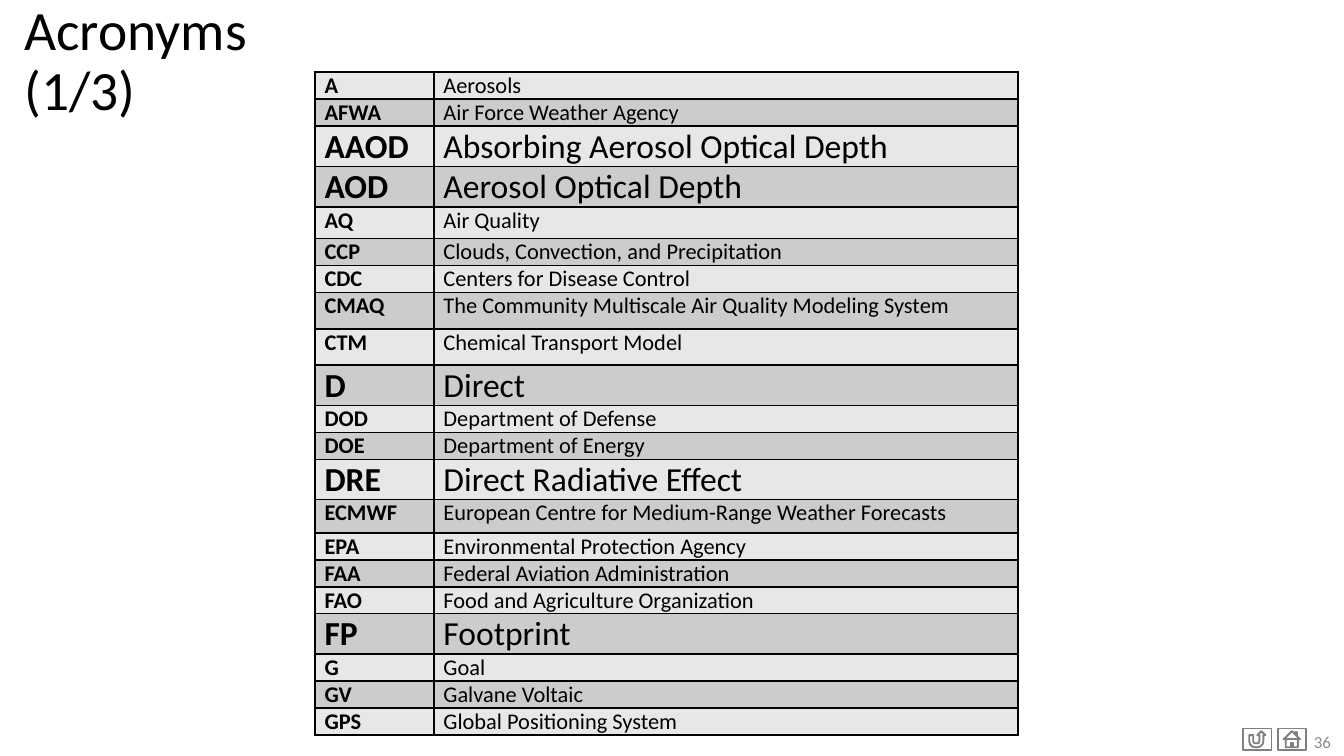
from lxml.etree import SubElement
from pptx import Presentation
from pptx.dml.color import RGBColor
from pptx.enum.shapes import MSO_SHAPE
from pptx.enum.text import MSO_ANCHOR, MSO_AUTO_SIZE, PP_ALIGN
from pptx.oxml.ns import qn
from pptx.util import Pt

COLORS = {
    "ink": "000000",
    "light": "E7E7E7",
    "dark": "CCCCCC",
    "button": "808080",
    "number": "8C8C8C",
}
ACRONYMS = [
    ("A", "Aerosols"),
    ("AFWA", "Air Force Weather Agency"),
    ("AAOD", "Absorbing Aerosol Optical Depth"),
    ("AOD", "Aerosol Optical Depth"),
    ("AQ", "Air Quality"),
    ("CCP", "Clouds, Convection, and Precipitation"),
    ("CDC", "Centers for Disease Control"),
    ("CMAQ", "The Community Multiscale Air Quality Modeling System"),
    ("CTM", "Chemical Transport Model"),
    ("D", "Direct"),
    ("DOD", "Department of Defense"),
    ("DOE", "Department of Energy"),
    ("DRE", "Direct Radiative Effect"),
    ("ECMWF", "European Centre for Medium-Range Weather Forecasts"),
    ("EPA", "Environmental Protection Agency"),
    ("FAA", "Federal Aviation Administration"),
    ("FAO", "Food and Agriculture Organization"),
    ("FP", "Footprint"),
    ("G", "Goal"),
    ("GV", "Galvane Voltaic"),
    ("GPS", "Global Positioning System"),
]
LARGE = {"AAOD", "AOD", "D", "DRE", "FP"}
ROW_HEIGHT = 14.4
TALL_ROWS = {"AAOD": 17.3, "AOD": 17.3, "AQ": 17, "CMAQ": 19.5, "CTM": 19.5, "ECMWF": 17.8}


class SlideBuilder:
    """Holds the deck style and the current slide, and adds each kind of element."""

    font = "Calibri"

    def __init__(self, deck):
        self.page = deck.slides.add_slide(deck.slide_layouts[5])

    def apply(self, target, **values):
        for name, value in values.items():
            setattr(target, name, value)

    def set_text(self, frame, text, size, color="ink", bold=False, align=PP_ALIGN.LEFT, spacing=1.0):
        frame.text = text
        for para in frame.paragraphs:
            self.apply(para, alignment=align, line_spacing=spacing)
            for span in para.runs:
                self.apply(span.font, name=self.font, size=Pt(size), bold=bold)
                span.font.color.rgb = RGBColor.from_string(COLORS[color])

    def title(self, text, left, top, width, height):
        box = self.page.shapes.title
        self.apply(box, left=Pt(left), top=Pt(top), width=Pt(width), height=Pt(height))
        self.apply(box.text_frame, word_wrap=True, auto_size=MSO_AUTO_SIZE.NONE,
                   vertical_anchor=MSO_ANCHOR.MIDDLE)
        self.set_text(box.text_frame, text, 29.7, spacing=0.9)

    def page_number(self, text, left, top, width, height):
        box = self.page.shapes.add_textbox(Pt(left), Pt(top), Pt(width), Pt(height))
        self.apply(box.text_frame, word_wrap=True, vertical_anchor=MSO_ANCHOR.MIDDLE)
        self.set_text(box.text_frame, text, 9, "number", align=PP_ALIGN.RIGHT)

    def button(self, kind, left, top, width, height):
        shape = self.page.shapes.add_shape(kind, Pt(left), Pt(top), Pt(width), Pt(height))
        shape.shadow.inherit = False
        shape.fill.background()
        shape.line.width = Pt(1)
        shape.line.color.rgb = RGBColor.from_string(COLORS["button"])

    def borders(self, cell):
        properties = cell._tc.get_or_add_tcPr()
        for position, side in enumerate(("lnL", "lnR", "lnT", "lnB")):
            line = SubElement(properties, qn(f"a:{side}"), w=str(Pt(1)))
            fill = SubElement(line, qn("a:solidFill"))
            SubElement(fill, qn("a:srgbClr"), val=COLORS["ink"])
            properties.insert(position, line)

    def table(self, entries, left, top, column_widths):
        heights = [TALL_ROWS.get(entry[0], ROW_HEIGHT) for entry in entries]
        frame = self.page.shapes.add_table(len(entries), len(column_widths), Pt(left), Pt(top),
                                           Pt(sum(column_widths)), Pt(sum(heights)))
        table = frame.table
        self.apply(table, first_row=False, horz_banding=False)
        for column, width in zip(table.columns, column_widths):
            column.width = Pt(width)
        for index, (row, entry) in enumerate(zip(table.rows, entries)):
            row.height = Pt(heights[index])
            size = 18 if entry[0] in LARGE else 12
            shade = "dark" if index % 2 else "light"
            for place, (cell, text) in enumerate(zip(row.cells, entry)):
                self.apply(cell, margin_left=Pt(5.2), margin_right=Pt(5.2),
                           margin_top=Pt(0), margin_bottom=Pt(0))
                cell.fill.solid()
                cell.fill.fore_color.rgb = RGBColor.from_string(COLORS[shade])
                self.set_text(cell.text_frame, text, size, bold=place == 0)
                self.borders(cell)


def main():
    deck = Presentation()
    deck.slide_width, deck.slide_height = Pt(720), Pt(405)
    builder = SlideBuilder(deck)
    builder.button(MSO_SHAPE.ACTION_BUTTON_HOME, 684.5, 390.3, 15.2, 11.5)
    builder.button(MSO_SHAPE.ACTION_BUTTON_RETURN, 666, 390.3, 15.2, 11.5)
    builder.title("Acronyms \v(1/3)", 5.8, -5.8, 620.6, 78.5)
    builder.page_number("36", 558, 386.6, 162, 21.6)
    builder.table(ACRONYMS, 168.7, 38.7, [63.7, 313.1])
    deck.save("out.pptx")


if __name__ == "__main__":
    main()
